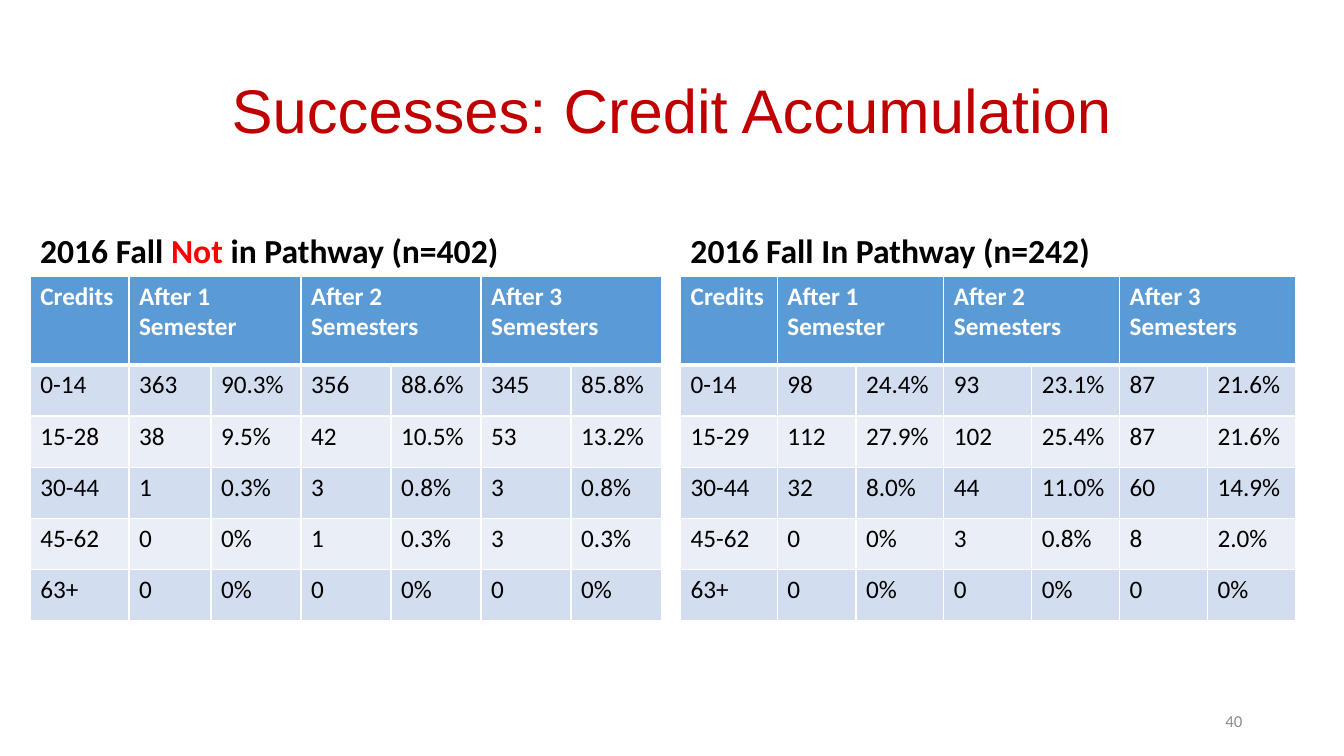
from dataclasses import dataclass
from lxml.etree import SubElement as Sub
from pptx import Presentation
from pptx.dml.color import RGBColor as Rgb
from pptx.enum.text import MSO_ANCHOR as Anchor, PP_ALIGN as Align
from pptx.oxml.ns import qn
from pptx.util import Emu, Inches, Pt

WHITE, BLACK, RED, TITLE, GRAY = "FFFFFF", "000000", "FF0000", "C00000", "8C8C8C"
HEAD, BANDS = "5B9BD5", ("D2DEEF", "EAEFF7")
TOPICS = ("After 1 Semester", "After 2 Semesters", "After 3 Semesters")
# Row heights, in percent of the slide height
ROWS = [11.73] + [6.77] * 5
Run = tuple[str, str]
Box = tuple[float, float, float, float]


@dataclass
class Panel:
    left: float
    width: float
    title: list[Run]
    cols: list[float]
    data: list[str]


@dataclass
class Label:
    box: Box
    runs: list[Run]
    size: int
    font: str = "Calibri"
    bold: bool = False
    align: Align = Align.LEFT
    anchor: Anchor = Anchor.MIDDLE
    space: float = 0.9


PANELS = [
    Panel(2.25, 46.95,
          [("2016 Fall ", BLACK), ("Not", RED), (" in Pathway (n=402)", BLACK)],
          [7.35, 6.1] + [6.7] * 5,
          ["0-14 363 90.3% 356 88.6% 345 85.8%",
           "15-28 38 9.5% 42 10.5% 53 13.2%",
           "30-44 1 0.3% 3 0.8% 3 0.8%",
           "45-62 0 0% 1 0.3% 3 0.3%",
           "63+ 0 0% 0 0% 0 0%"]),
    Panel(50.64, 42.53,
          [("2016 Fall In Pathway (n=242)", BLACK)],
          [7.2, 5.85] + [6.54] * 5,
          ["0-14 98 24.4% 93 23.1% 87 21.6%",
           "15-29 112 27.9% 102 25.4% 87 21.6%",
           "30-44 32 8.0% 44 11.0% 60 14.9%",
           "45-62 0 0% 3 0.8% 8 2.0%",
           "63+ 0 0% 0 0% 0 0%"]),
]

deck = Presentation()
deck.slide_width, deck.slide_height = Inches(13.33), Inches(7.5)
slide = deck.slides.add_slide(deck.slide_layouts[6])


def color(code: str) -> Rgb:
    return Rgb.from_string(code)


def across(share: float) -> Emu:
    return Emu(round(deck.slide_width * share / 100))


def down(share: float) -> Emu:
    return Emu(round(deck.slide_height * share / 100))


def place(box: Box) -> tuple[Emu, Emu, Emu, Emu]:
    left, top, width, height = box
    return across(left), down(top), across(width), down(height)


def write(label: Label) -> None:
    frame = slide.shapes.add_textbox(*place(label.box)).text_frame
    frame.word_wrap = True
    frame.vertical_anchor = label.anchor
    para = frame.paragraphs[0]
    para.alignment, para.line_spacing = label.align, label.space
    font = para.font
    font.name, font.size, font.bold = label.font, Pt(label.size), label.bold
    for text, code in label.runs:
        run = para.add_run()
        run.text = text
        run.font.color.rgb = color(code)


def border(cell, row: int) -> None:
    # The rule between header and body is thicker
    widths = {"L": 1, "R": 1, "T": 3 if row == 1 else 1, "B": 3 if row == 0 else 1}
    props = cell._tc.get_or_add_tcPr()
    for spot, (side, width) in enumerate(widths.items()):
        line = Sub(props, qn(f"a:ln{side}"), w=str(Pt(width)))
        Sub(Sub(line, qn("a:solidFill")), qn("a:srgbClr"), val=WHITE)
        props.insert(spot, line)


def tabulate(panel: Panel) -> None:
    box = (panel.left, 36.53, sum(panel.cols), sum(ROWS))
    table = slide.shapes.add_table(len(ROWS), len(panel.cols), *place(box)).table
    for col, share in zip(table.columns, panel.cols):
        col.width = across(share)
    for row, share in zip(table.rows, ROWS):
        row.height = down(share)

    # Each header topic spans a count and a percentage
    head = ["Credits"]
    for spot, topic in enumerate(TOPICS):
        head += [topic, ""]
        first = 2 * spot + 1
        table.cell(0, first).merge(table.cell(0, first + 1))

    for row, texts in enumerate([head] + [line.split() for line in panel.data]):
        for col, text in enumerate(texts):
            cell = table.cell(row, col)
            cell.fill.solid()
            cell.fill.fore_color.rgb = color(BANDS[(row - 1) % 2] if row else HEAD)
            border(cell, row)
            if text:
                cell.text = text
                font = cell.text_frame.paragraphs[0].font
                font.name, font.size, font.bold = "Calibri", Pt(18), row == 0
                font.color.rgb = color(BLACK if row else WHITE)


# Title
write(Label((6.88, 5.33, 86.25, 19.33), [("Successes: Credit Accumulation", TITLE)],
            44, font="Arial", align=Align.CENTER))

# Headings and tables
for panel in PANELS:
    write(Label((panel.left, 24.53, panel.width, 12), panel.title, 24,
                bold=True, anchor=Anchor.BOTTOM))
    tabulate(panel)

# Slide number
write(Label((70.67, 92.67, 22.5, 5.33), [("40", GRAY)], 12,
            align=Align.RIGHT, space=1.0))

deck.save("out.pptx")
